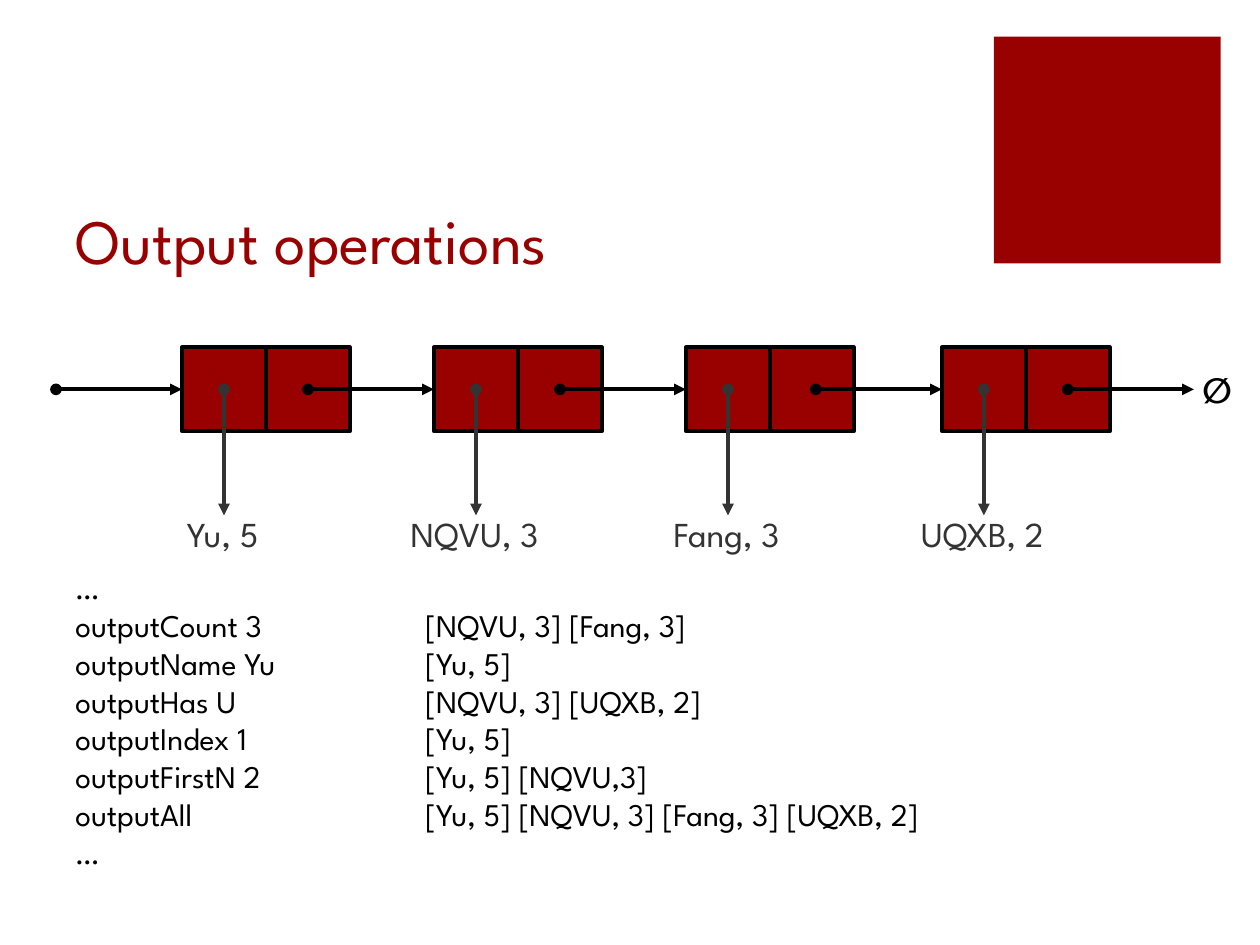
from lxml.etree import SubElement
from pptx import Presentation
from pptx.dml.color import RGBColor
from pptx.enum.shapes import MSO_CONNECTOR, MSO_SHAPE
from pptx.enum.text import MSO_ANCHOR, PP_ALIGN
from pptx.oxml.ns import qn
from pptx.util import Pt

FONT = "League Spartan"
RED, BLACK, GRAY = "990000", "000000", "333333"
CELL = 48
ARROW = 72
LIST_TOP = 198.5
LIST_MIDDLE = LIST_TOP + CELL / 2

NODES = [(104, "Yu, 5"), (248, "NQVU, 3"), (392, "Fang, 3"), (538.2, "UQXB, 2")]
COMMANDS = ["…", "outputCount 3", "outputName Yu", "outputHas U",
            "outputIndex 1", "outputFirstN 2", "outputAll", "…"]
RESULTS = ["[NQVU, 3] [Fang, 3]", "[Yu, 5]", "[NQVU, 3] [UQXB, 2]", "[Yu, 5]",
           "[Yu, 5] [NQVU,3]", "[Yu, 5] [NQVU, 3] [Fang, 3] [UQXB, 2]"]


def color(code):
    return RGBColor.from_string(code)


def add_span(para, text, size, code, bold=False):
    span = para.add_run()
    span.text = text
    span.font.name = FONT
    span.font.size = Pt(size)
    span.font.bold = bold
    span.font.color.rgb = color(code)


def add_title(page, text):
    title = page.shapes.title
    title.left, title.top, title.width, title.height = Pt(36), Pt(72), Pt(512.6), Pt(90)
    title.text_frame.vertical_anchor = MSO_ANCHOR.BOTTOM
    para = title.text_frame.paragraphs[0]
    para.alignment = PP_ALIGN.LEFT
    add_span(para, text, 36, RED)


def add_text(page, lines, left, top, width, height, size, code,
             align=PP_ALIGN.LEFT, bold=False):
    box = page.shapes.add_textbox(Pt(left), Pt(top), Pt(width), Pt(height))
    frame = box.text_frame
    frame.word_wrap = False
    for number, line in enumerate(lines):
        para = frame.add_paragraph() if number else frame.paragraphs[0]
        para.alignment = align
        add_span(para, line, size, code, bold)


def add_square(page, left, top, side, outlined=True):
    square = page.shapes.add_shape(MSO_SHAPE.RECTANGLE, Pt(left), Pt(top), Pt(side), Pt(side))
    square.shadow.inherit = False
    square.fill.solid()
    square.fill.fore_color.rgb = color(RED)
    if outlined:
        square.line.color.rgb = color(BLACK)
        square.line.width = Pt(2.25)
    else:
        square.line.fill.background()
    return square


def add_pointer(page, left, across, down, code):
    """Arrow with a dot at its start, which lies on the middle line of the list."""
    pointer = page.shapes.add_connector(
        MSO_CONNECTOR.STRAIGHT, Pt(left), Pt(LIST_MIDDLE),
        Pt(left + across), Pt(LIST_MIDDLE + down))
    pointer.line.color.rgb = color(code)
    pointer.line.width = Pt(2.25)
    line = pointer.line._get_or_add_ln()
    SubElement(line, qn("a:headEnd"), type="oval")
    SubElement(line, qn("a:tailEnd"), type="triangle")
    SubElement(pointer._element.spPr, qn("a:effectLst"))
    return pointer


def add_node(page, left, label):
    data_cell = add_square(page, left, LIST_TOP, CELL)
    add_square(page, left + CELL, LIST_TOP, CELL)
    add_pointer(page, left - ARROW, ARROW, 0, BLACK).end_connect(data_cell, 1)
    middle = left + CELL / 2
    add_pointer(page, middle, 0, ARROW, GRAY)
    width = 96
    add_text(page, [label], middle - 0.8 - width / 2, 289.6, width, 31.7,
             20, GRAY, PP_ALIGN.CENTER)


def main():
    deck = Presentation()
    deck.slide_width, deck.slide_height = Pt(720), Pt(540)
    page = deck.slides.add_slide(deck.slide_layouts[5])
    add_square(page, 568, 21, 129.6, outlined=False)
    add_title(page, "Output operations")
    for left, label in NODES:
        add_node(page, left, label)
    last_left = NODES[-1][0]
    add_pointer(page, last_left + ARROW, ARROW, 0, BLACK)
    add_text(page, ["∅"], 679.9, 206.9, 31, 31, 20, BLACK, PP_ALIGN.CENTER, bold=True)
    add_text(page, COMMANDS, 36, 321.1, 157, 181.4, 18, BLACK)
    add_text(page, RESULTS, 236, 342.7, 327.6, 137, 18, BLACK)
    deck.save("out.pptx")


if __name__ == "__main__":
    main()
